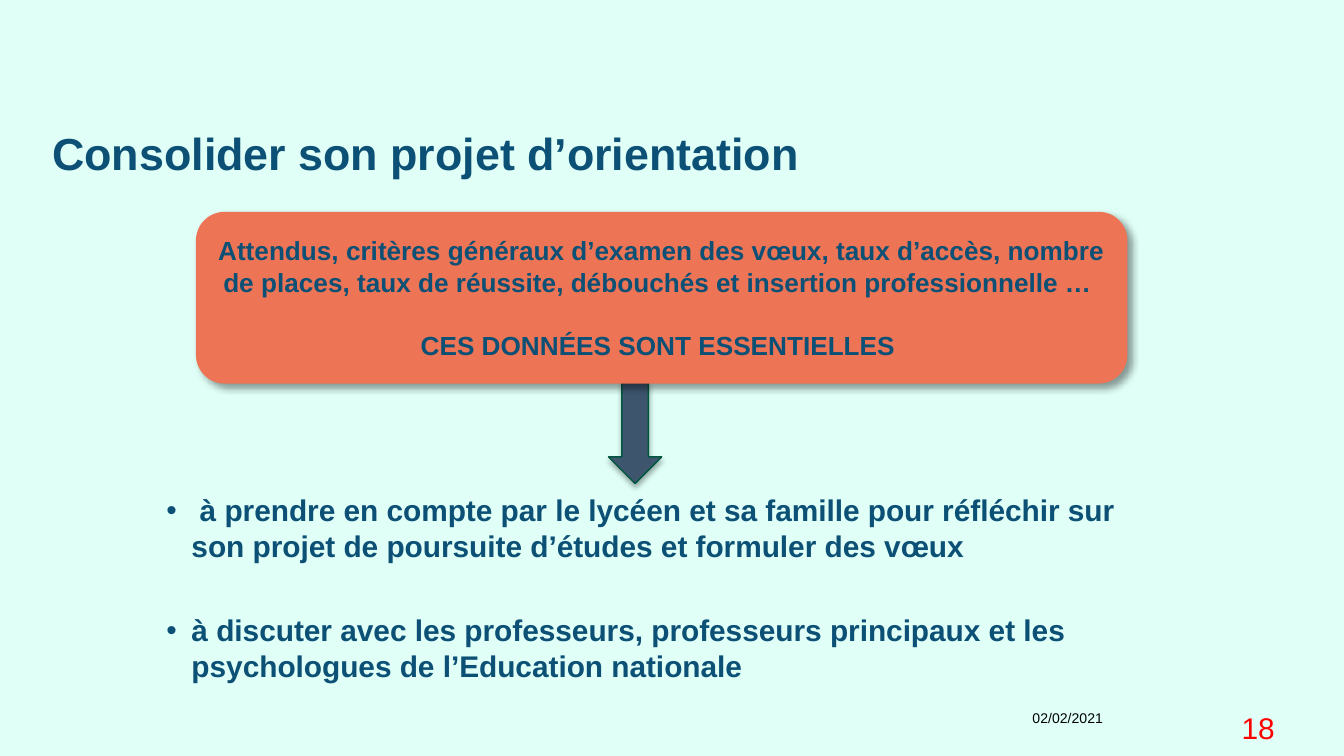
from lxml import etree
from pptx import Presentation
from pptx.dml.color import RGBColor
from pptx.enum.shapes import MSO_SHAPE
from pptx.enum.text import MSO_ANCHOR, PP_ALIGN
from pptx.oxml.ns import qn
from pptx.util import Pt

MINT = RGBColor(0xDF, 0xFF, 0xF7)
NAVY = RGBColor(0x0C, 0x50, 0x76)
SLATE = RGBColor(0x3D, 0x56, 0x6E)
GREEN = RGBColor(0x00, 0x56, 0x40)
CORAL = RGBColor(0xED, 0x74, 0x54)
BLACK = RGBColor(0x00, 0x00, 0x00)
RED = RGBColor(0xFF, 0x00, 0x00)


def style(font, size, color, bold=False):
    font.name = "Arial"
    font.size = Pt(size)
    font.color.rgb = color
    font.bold = bold


def add_text_frame(slide, left, top, width, height):
    frame = slide.shapes.add_textbox(Pt(left), Pt(top), Pt(width), Pt(height)).text_frame
    frame.word_wrap = True
    return frame


def add_title(slide, text):
    frame = add_text_frame(slide, 28, 70.5, 663, 57)
    frame.margin_left = frame.margin_top = frame.margin_right = frame.margin_bottom = 0
    title = frame.paragraphs[0]
    title.text = text
    title.line_spacing = 0.9
    style(title.runs[0].font, 24, NAVY, True)


def add_footer(slide, left, text, size, color):
    footer = add_text_frame(slide, left, 376.5, 92, 28).paragraphs[0]
    footer.text = text
    footer.alignment = PP_ALIGN.RIGHT
    style(footer.runs[0].font, size, color)


def add_shadow(shape, opacity, blur, distance, angle):
    shape.shadow.inherit = False
    effects = shape._element.spPr.find(qn("a:effectLst"))
    shadow = etree.SubElement(
        effects, qn("a:outerShdw"), blurRad=str(Pt(blur)), dist=str(Pt(distance)),
        dir=str(angle * 60000), algn="tl", rotWithShape="0")
    color = etree.SubElement(shadow, qn("a:srgbClr"), val=str(BLACK))
    etree.SubElement(color, qn("a:alpha"), val=str(opacity * 1000))


def add_arrow(slide):
    arrow = slide.shapes.add_shape(MSO_SHAPE.DOWN_ARROW, Pt(326), Pt(205), Pt(28.5), Pt(54))
    arrow.fill.solid()
    arrow.fill.fore_color.rgb = SLATE
    arrow.line.color.rgb = GREEN
    arrow.line.width = Pt(0.75)
    add_shadow(arrow, 35, 3.1, 1.8, 90)


def add_callout(slide, texts):
    callout = slide.shapes.add_shape(
        MSO_SHAPE.ROUNDED_RECTANGLE, Pt(105), Pt(113.5), Pt(499), Pt(92))
    callout.fill.solid()
    callout.fill.fore_color.rgb = CORAL
    callout.line.fill.background()
    add_shadow(callout, 40, 4, 3, 45)
    frame = callout.text_frame
    frame.vertical_anchor = MSO_ANCHOR.MIDDLE
    frame.text = "\n".join(texts)
    for paragraph in frame.paragraphs:
        paragraph.alignment = PP_ALIGN.CENTER
        style(paragraph.runs[0].font, 14, NAVY, True)
    frame.paragraphs[-1].space_before = Pt(17)


def add_bullets(slide, items):
    frame = add_text_frame(slide, 82, 260, 538.5, 112)
    frame.text = "\n".join(items)
    for paragraph in frame.paragraphs:
        properties = paragraph._p.get_or_add_pPr()
        properties.set("marL", str(Pt(13.5)))
        properties.set("indent", str(-Pt(13.5)))
        etree.SubElement(properties, qn("a:buFont"), typeface="Arial")
        etree.SubElement(properties, qn("a:buChar"), char="•")
        style(paragraph.runs[0].font, 16, NAVY, True)
    frame.paragraphs[-1].space_before = Pt(26)


def main():
    presentation = Presentation()
    presentation.slide_width = Pt(720)
    presentation.slide_height = Pt(405)
    slide = presentation.slides.add_slide(presentation.slide_layouts[6])
    slide.background.fill.solid()
    slide.background.fill.fore_color.rgb = MINT

    add_title(slide, "Consolider son projet d’orientation")
    add_footer(slide, 506, "02/02/2021", 7.5, BLACK)
    add_footer(slide, 598, "18", 16, RED)
    add_bullets(slide, [
        " à prendre en compte par le lycéen et sa famille pour réfléchir sur "
        "son projet de poursuite d’études et formuler des vœux",
        "à discuter avec les professeurs, professeurs principaux et les "
        "psychologues de l’Education nationale",
    ])
    add_arrow(slide)
    add_callout(slide, [
        "Attendus, critères généraux d’examen des vœux, taux d’accès, nombre "
        "de places, taux de réussite, débouchés et insertion professionnelle … ",
        "CES DONNÉES SONT ESSENTIELLES ",
    ])
    presentation.save("out.pptx")


if __name__ == "__main__":
    main()
